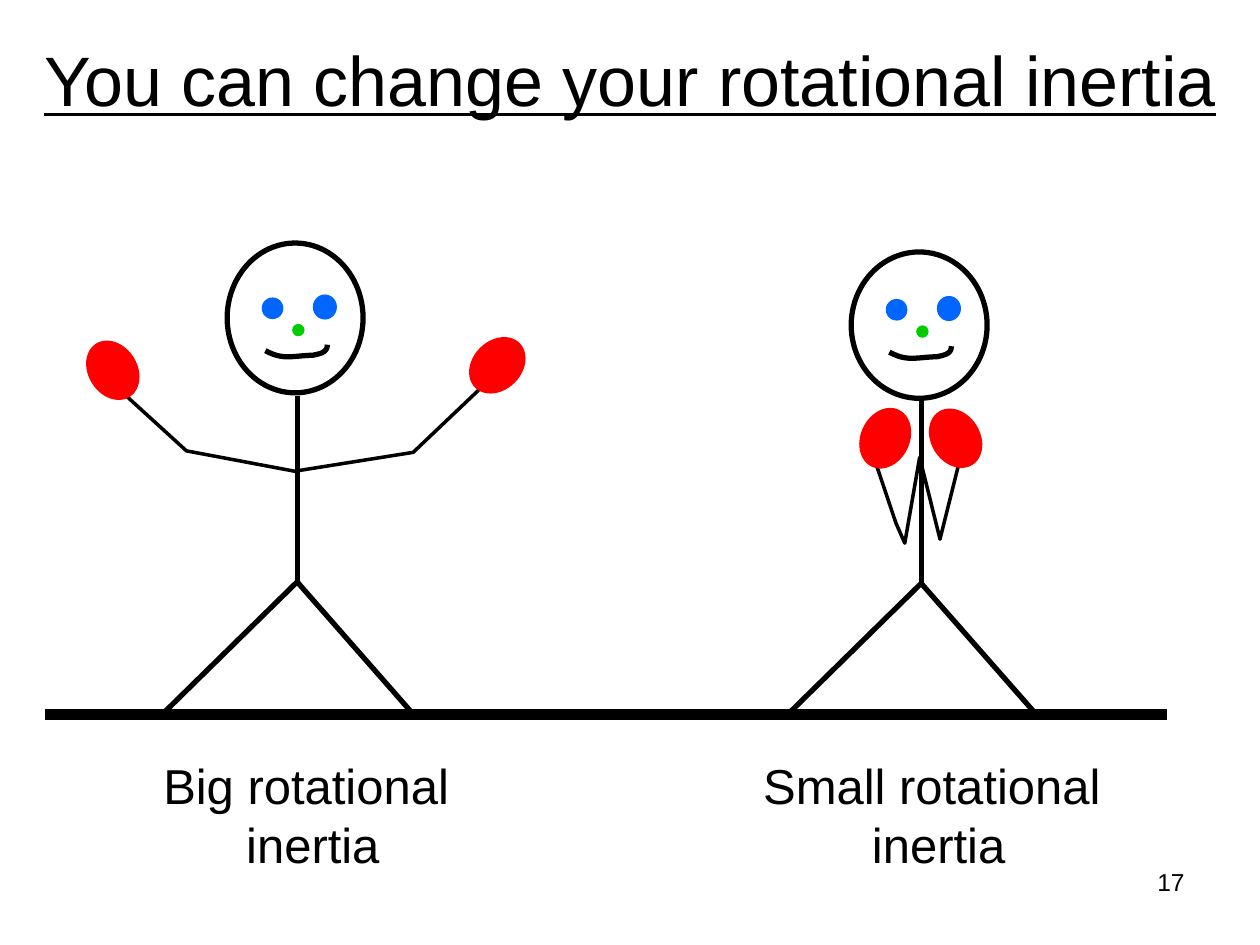
"""Build a slide comparing two stick figures with big and small rotational inertia."""
import dataclasses

import pptx
import pptx.dml.color
import pptx.enum.shapes
import pptx.enum.text
import pptx.oxml
import pptx.util

Cm = pptx.util.Cm
Align = pptx.enum.text.PP_ALIGN
Anchor = pptx.enum.text.MSO_ANCHOR


@dataclasses.dataclass(frozen=True)
class Theme:
    font: str = "Arial"
    ink: str = "000000"
    eye: str = "0066FF"
    nose: str = "00CC00"
    glove: str = "FF0000"
    title: int = 40
    label: int = 28
    number: int = 14
    ground: float = 6
    body: float = 3
    arm: float = 2
    thin: float = 0.75


def rgb(value):
    return pptx.dml.color.RGBColor.from_string(value)


def bezier(p0, p1, p2, p3, steps=12):
    points = []
    for i in range(1, steps + 1):
        t = i / steps
        u = 1 - t
        weights = (u ** 3, 3 * u * u * t, 3 * u * t * t, t ** 3)
        points.append(tuple(sum(w * p[axis] for w, p in zip(weights, (p0, p1, p2, p3)))
                            for axis in (0, 1)))
    return points


class Sketch:
    def __init__(self, slide, theme):
        self.s = slide
        self.theme = theme

    def text(self, box, lines, size, align, wrap=True, anchor=Anchor.TOP, underline=None):
        tf = self.s.shapes.add_textbox(*map(Cm, box)).text_frame
        for name, value in {"word_wrap": wrap, "vertical_anchor": anchor}.items():
            setattr(tf, name, value)
        style = {"name": self.theme.font, "size": pptx.util.Pt(size), "underline": underline}
        for i, line in enumerate(lines):
            p = tf.paragraphs[0] if i == 0 else tf.add_paragraph()
            p.alignment = align
            r = p.add_run()
            r.text = line
            for name, value in style.items():
                setattr(r.font, name, value)
            r.font.color.rgb = rgb(self.theme.ink)

    def stroke(self, sp, width, color=None):
        sp.line.color.rgb = rgb(color or self.theme.ink)
        sp.line.width = pptx.util.Pt(width)

    def line(self, start, end, width):
        sp = self.s.shapes.add_connector(
            pptx.enum.shapes.MSO_CONNECTOR.STRAIGHT, *map(Cm, (*start, *end)))
        self.stroke(sp, width)
        sp._element.spPr.append(pptx.oxml.parse_xml(
            '<a:effectLst xmlns:a="http://schemas.openxmlformats.org/drawingml/2006/main"/>'))

    def ellipse(self, box, fill=None, line=None, width=0, rotation=0):
        sp = self.s.shapes.add_shape(pptx.enum.shapes.MSO_SHAPE.OVAL, *map(Cm, box))
        sp.shadow.inherit = False
        sp.rotation = rotation
        if fill:
            sp.fill.solid()
            sp.fill.fore_color.rgb = rgb(fill)
        else:
            sp.fill.background()
        if line:
            self.stroke(sp, width, line)
        else:
            sp.line.fill.background()

    def curve(self, points, width):
        emu = [(Cm(x), Cm(y)) for x, y in points]
        fb = self.s.shapes.build_freeform(*emu[0], scale=1.0)
        fb.add_line_segments(emu[1:], close=False)
        sp = fb.convert_to_shape()
        sp.shadow.inherit = False
        sp.fill.background()
        self.stroke(sp, width)

    def figure(self, hip, head_top, head_height, arms, gloves):
        t = self.theme

        def at(dx, dy):
            return hip[0] + dx, hip[1] + dy

        self.ellipse((hip[0] - 1.41, head_top, 2.74, head_height), line=t.ink, width=t.body)
        for dx, dy, w, h in ((0.33, -5.78, 0.46, 0.48), (-0.7, -5.72, 0.41, 0.41)):
            self.ellipse((*at(dx, dy), w, h), t.eye, t.eye, t.thin)
        smile = [(-0.64, -4.66), (-0.28, -4.47), (-0.15, -4.55), (0.33, -4.57),
                 (0.46, -4.6), (0.61, -4.62), (0.61, -4.78)]
        points = smile[:1] + bezier(*smile[:4]) + bezier(*smile[3:])
        self.curve([at(*p) for p in points], t.body)
        for end in ((0, -3.75), (-2.74, 2.69), (2.3, 2.62)):
            self.line(at(0, 0), at(*end), t.body)
        self.ellipse((*at(-0.1, -5.2), 0.25, 0.25), t.nose)
        self.curve([at(*p) for p in arms], t.arm)
        for dx, dy, rotation in gloves:
            self.ellipse((*at(dx, dy), 0.99, 1.27), t.glove, rotation=rotation)


def main():
    prs = pptx.Presentation()
    prs.slide_width, prs.slide_height = Cm(25.4), Cm(19.05)
    theme = Theme()
    sketch = Sketch(prs.slides.add_slide(prs.slide_layouts[6]), theme)

    sketch.text((0, 0, 25.4, 3.18), ["You can change your rotational inertia"], theme.title,
                Align.CENTER, anchor=Anchor.MIDDLE, underline=True)
    for left, width, size_word in ((3.02, 6.3, "Big"), (15.09, 7.39, "Small")):
        sketch.text((left, 15.11, width, 2.63), [f"{size_word} rotational", " inertia"],
                    theme.label, Align.CENTER, wrap=False)
    sketch.text((18.21, 17.35, 5.92, 1.32), ["17"], theme.number, Align.RIGHT)
    sketch.line((0.91, 14.4), (23.52, 14.4), theme.ground)

    sketch.figure(
        (18.57, 11.76), 5.08, 2.95,
        [(-0.92, -2.44), (-0.51, -1.22), (-0.33, -0.81), (-0.03, -2.54),
         (0.38, -0.89), (0.78, -2.49)],
        [(0.2, -3.56, 327.8), (-1.22, -3.56, 25.5)])
    sketch.figure(
        (5.99, 11.73), 4.9, 3.02,
        [(-3.48, -3.78), (-2.23, -2.64), (-0.05, -2.23), (2.34, -2.61), (3.76, -3.96)],
        [(3.54, -5, 45), (-4.21, -4.9, 327.8)])
    prs.save("out.pptx")


if __name__ == "__main__":
    main()
